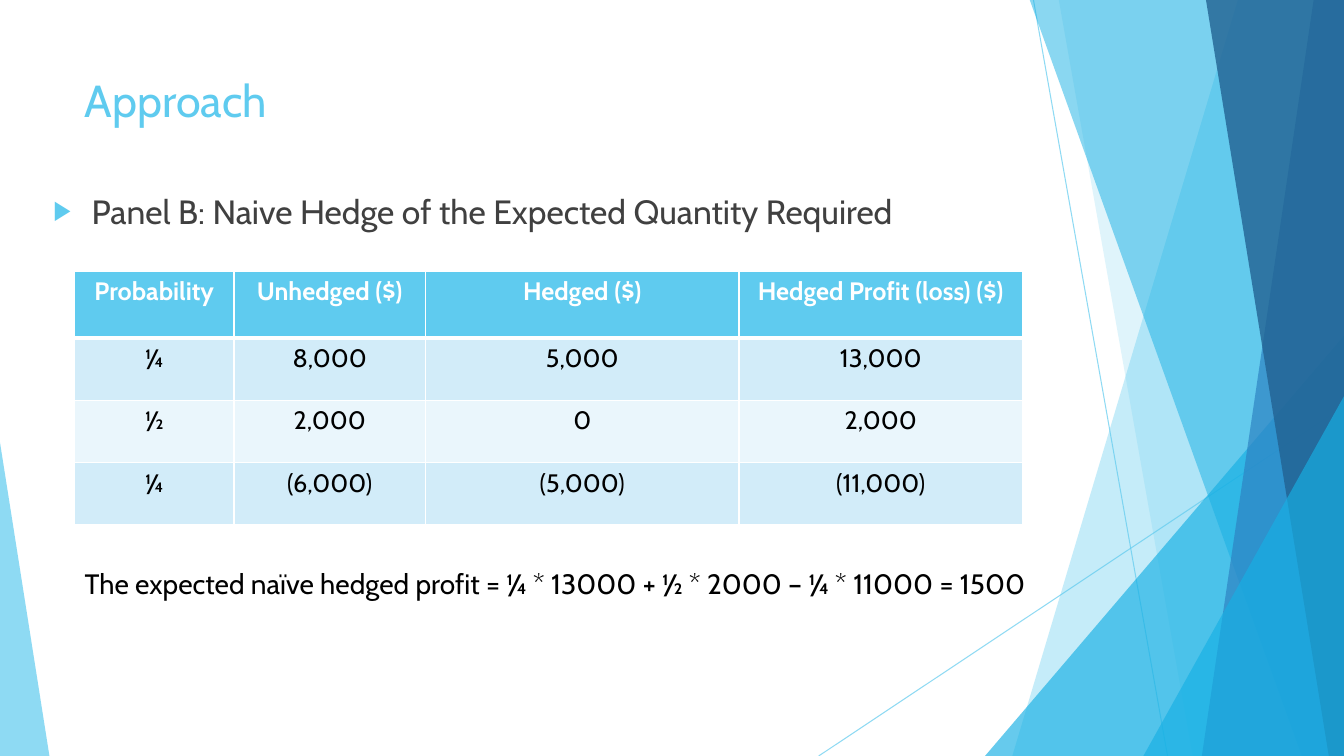
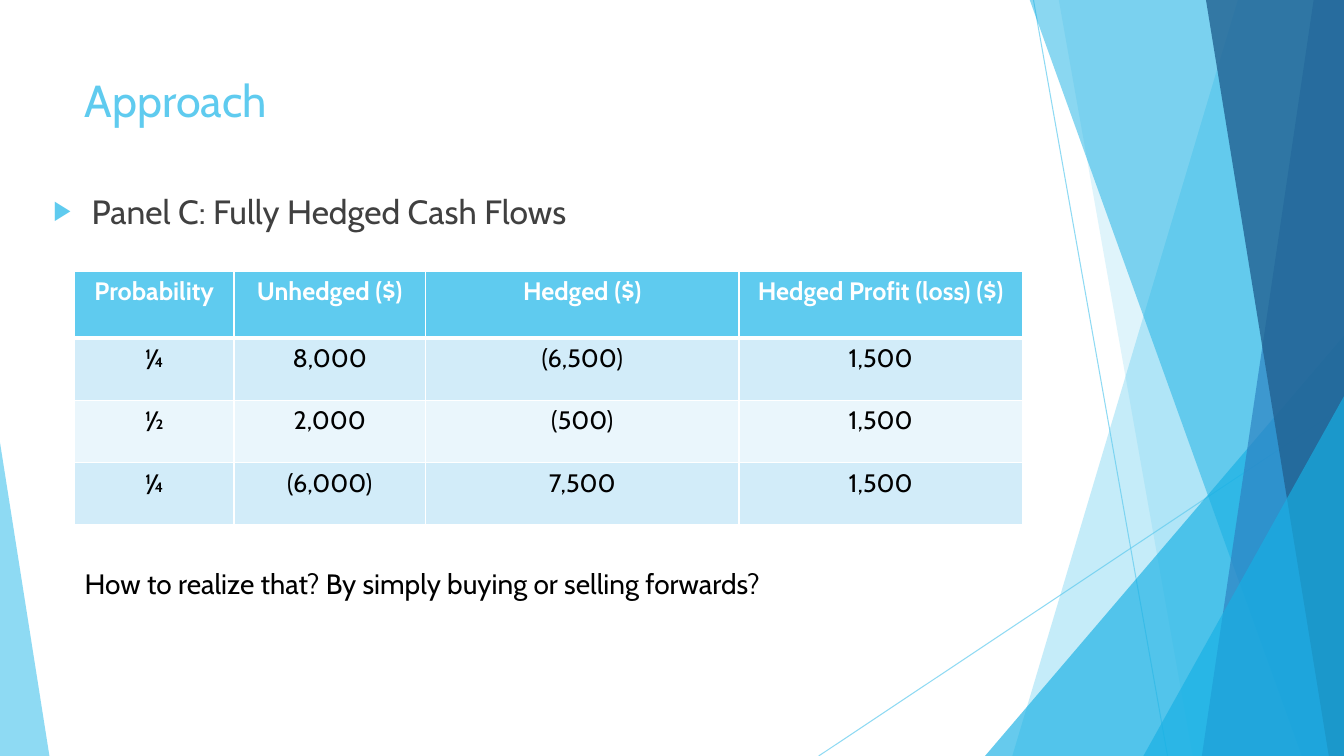
from lxml.etree import SubElement
from pptx import Presentation
from pptx.dml.color import RGBColor
from pptx.enum.shapes import MSO_CONNECTOR, MSO_SHAPE
from pptx.enum.text import MSO_ANCHOR, MSO_AUTO_SIZE, PP_ALIGN
from pptx.oxml.ns import qn
from pptx.util import Inches, Pt

SKY = RGBColor(0x5F, 0xCB, 0xEF)
CYAN = RGBColor(0x17, 0xB0, 0xE4)
BLUE = RGBColor(0x2E, 0x83, 0xC3)
NAVY = RGBColor(0x22, 0x62, 0x92)
PALE = RGBColor(0xD2, 0xEC, 0xF9)
PALER = RGBColor(0xEA, 0xF6, 0xFC)
GREY = RGBColor(0x40, 0x40, 0x40)
BLACK = RGBColor(0, 0, 0)
WHITE = RGBColor(0xFF, 0xFF, 0xFF)
FONT = "Cabin"
WIDTH, HEIGHT = 13.33, 7.5

HEADER = ["Probability", "Unhedged ($)", "Hedged ($)", "Hedged Profit (loss) ($)"]
COL_WIDTHS = [1.58, 1.9, 3.11, 2.81]
ROW_HEIGHTS = [0.66, 0.62, 0.62, 0.62]
PANELS = [
    ("Panel B: Naive Hedge of the Expected Quantity Required",
     [["¼", "8,000", "5,000", "13,000"],
      ["½", "2,000", "0", "2,000"],
      ["¼", "(6,000)", "(5,000)", "(11,000)"]],
     "The expected naïve hedged profit = ¼ * 13000 + ½ * 2000 – ¼ * 11000 = 1500"),
    ("Panel C: Fully Hedged Cash Flows",
     [["¼", "8,000", "(6,500)", "1,500"],
      ["½", "2,000", "(500)", "1,500"],
      ["¼", "(6,000)", "7,500", "1,500"]],
     "How to realize that? By simply buying or selling forwards?"),
]


def add_run(p, text, size, color, bold=False):
    r = p.add_run()
    r.text = text
    r.font.name = FONT
    r.font.size = Pt(size)
    r.font.bold = bold
    r.font.color.rgb = color


def set_alpha(shape, percent):
    color = shape._element.spPr.find(".//" + qn("a:srgbClr"))
    SubElement(color, qn("a:alpha"), val=str(percent * 1000))


prs = Presentation()
prs.slide_width, prs.slide_height = Inches(WIDTH), Inches(HEIGHT)

# Layout: title and body positions
layout = prs.slide_layouts[1]
for ph, box in zip(layout.placeholders, [(0.74, 0.67, 9.4, 1.44), (0.43, 1.84, 10.98, 4.91)]):
    ph.left, ph.top, ph.width, ph.height = [Inches(v) for v in box]
    ph.text_frame.vertical_anchor = MSO_ANCHOR.TOP
    ph.text_frame.auto_size = MSO_AUTO_SIZE.NONE
slides = [prs.slides.add_slide(layout) for _ in PANELS]

# Layout: thin lines behind the facets
group = slides[0].shapes.add_group_shape()
for x1, y1, x2, y2 in [(10.25, 0, 11.58, HEIGHT), (WIDTH, 4.03, 8.12, HEIGHT)]:
    line = group.shapes.add_connector(
        MSO_CONNECTOR.STRAIGHT, Inches(x1), Inches(y1), Inches(x2), Inches(y2))
    line.line.color.rgb = SKY
    line.line.width = Pt(0.75)
    set_alpha(line, 70)
    SubElement(line._element.spPr, qn("a:effectLst"))

# Layout: facets; a band is (top x, bottom x) and runs to the right edge,
# a triangle is (left, top, width, apex) and stands on the bottom edge
facets = [
    ((12.28, 10.04), SKY, 36),
    ((10.5, 11.83), SKY, 20),
    ((9.77, 3.33, 3.56, 1), CYAN, 66),
    ((10.21, 12.91), CYAN, 50),
    ((13.03, 11.92), BLUE, 70),
    ((11.96, 13.18), NAVY, 80),
    ((11.34, 3.93, 1.99, 1), CYAN, 66),
    ((0, 4.39, 0.49, 0), SKY, 70),
]
for geometry, color, alpha in facets:
    if len(geometry) == 2:
        top_x, bottom_x = geometry
        outline = group.shapes.build_freeform(Inches(top_x), Inches(-0.01))
        outline.add_line_segments(
            [(Inches(x), Inches(y))
             for x, y in [(WIDTH, -0.01), (WIDTH, HEIGHT), (bottom_x, HEIGHT)]])
        facet = outline.convert_to_shape()
    else:
        left, top, width, apex = geometry
        facet = group.shapes.add_shape(
            MSO_SHAPE.ISOSCELES_TRIANGLE,
            Inches(left), Inches(top), Inches(width), Inches(HEIGHT - top))
        facet.adjustments[0] = apex
    facet.shadow.inherit = False
    facet.fill.solid()
    facet.fill.fore_color.rgb = color
    facet.line.fill.background()
    set_alpha(facet, alpha)

# Move the decoration to the layout, with ids of its own
for number, props in enumerate(group._element.iter(qn("p:cNvPr")), 100):
    props.set("id", str(number))
layout.shapes._spTree.insert(2, group._element)

for s, (heading, rows, note) in zip(slides, PANELS):
    # Title
    p = s.shapes.title.text_frame.paragraphs[0]
    p.alignment = PP_ALIGN.LEFT
    add_run(p, "Approach", 32, SKY)

    # Bulleted heading
    p = s.placeholders[1].text_frame.paragraphs[0]
    p.space_before = Pt(10)
    add_run(p, heading, 24, GREY)
    pPr = p._p.get_or_add_pPr()
    pPr.set("marL", str(Inches(0.38)))
    pPr.set("indent", str(Inches(-0.38)))
    SubElement(SubElement(pPr, qn("a:buClr")), qn("a:srgbClr"), val=str(SKY))
    SubElement(pPr, qn("a:buSzPct"), val="80000")
    SubElement(pPr, qn("a:buChar"), char="▶")

    # Table
    table = s.shapes.add_table(
        len(ROW_HEIGHTS), len(COL_WIDTHS), Inches(0.74), Inches(2.69),
        Inches(sum(COL_WIDTHS)), Inches(sum(ROW_HEIGHTS))).table
    for column, width in zip(table.columns, COL_WIDTHS):
        column.width = Inches(width)
    for row, height in zip(table.rows, ROW_HEIGHTS):
        row.height = Inches(height)
    for i, values in enumerate([HEADER] + rows):
        for j, value in enumerate(values):
            cell = table.cell(i, j)
            p = cell.text_frame.paragraphs[0]
            p.alignment = PP_ALIGN.CENTER
            add_run(p, value, 18, BLACK if i else WHITE, bold=i == 0)
            tcPr = cell._tc.get_or_add_tcPr()
            for side in "LRTB":
                thick = (i, side) in [(0, "B"), (1, "T")]
                border = SubElement(tcPr, qn("a:ln" + side), w=str(Pt(3 if thick else 1)))
                SubElement(SubElement(border, qn("a:solidFill")), qn("a:srgbClr"), val=str(WHITE))
            cell.fill.solid()
            cell.fill.fore_color.rgb = SKY if i == 0 else PALE if i % 2 else PALER

    # Note under the table
    tf = s.shapes.add_textbox(Inches(0.74), Inches(5.57), Inches(9.81), Inches(0.44)).text_frame
    tf.word_wrap = True
    tf.auto_size = MSO_AUTO_SIZE.SHAPE_TO_FIT_TEXT
    add_run(tf.paragraphs[0], note, 20, BLACK)

prs.save("out.pptx")
